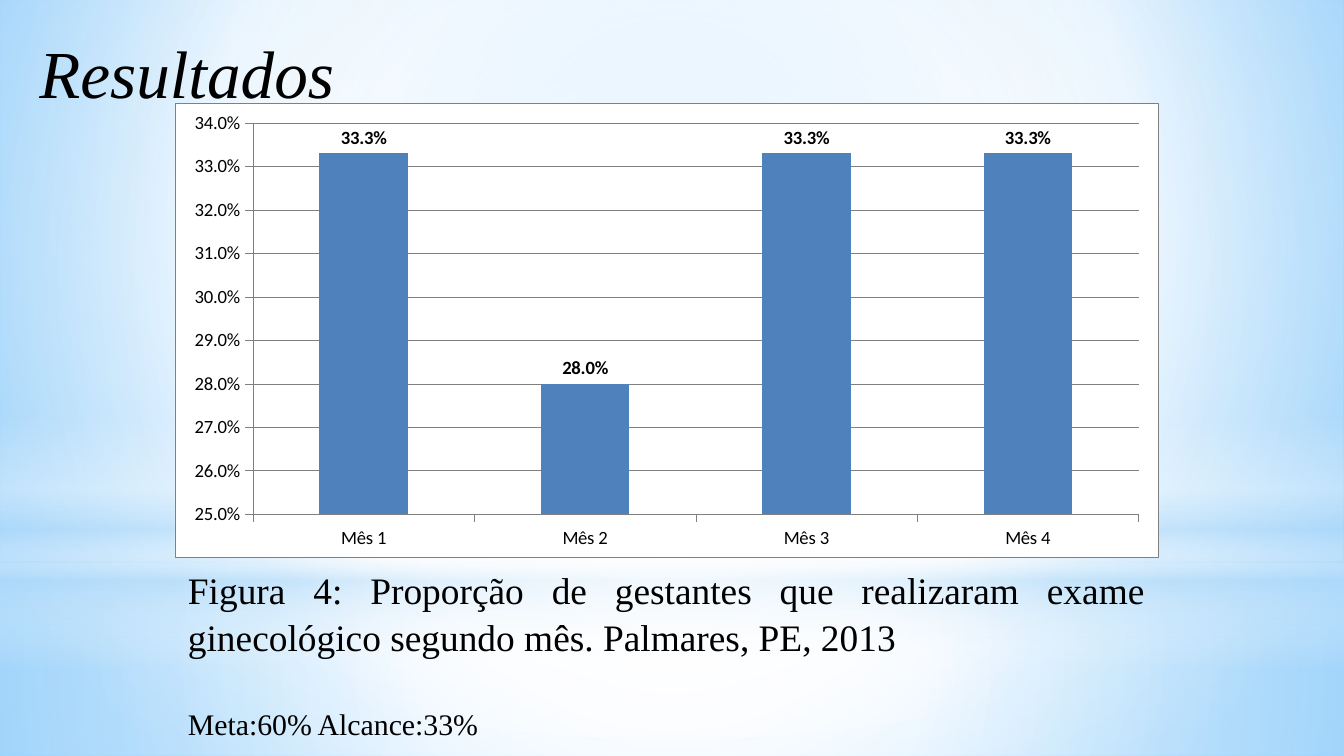
from dataclasses import dataclass

from pptx import Presentation
from pptx.chart.data import CategoryChartData
from pptx.dml.color import RGBColor
from pptx.enum.chart import XL_CHART_TYPE, XL_LABEL_POSITION, XL_TICK_MARK
from pptx.enum.shapes import MSO_SHAPE
from pptx.enum.text import PP_ALIGN
from pptx.oxml import parse_xml
from pptx.oxml.ns import nsdecls, qn
from pptx.util import Pt

RECT, OVAL = MSO_SHAPE.RECTANGLE, MSO_SHAPE.OVAL
LEFT, JUSTIFY = PP_ALIGN.LEFT, PP_ALIGN.JUSTIFY
COLUMNS = XL_CHART_TYPE.COLUMN_CLUSTERED
ABOVE = XL_LABEL_POSITION.OUTSIDE_END
OUTSIDE = XL_TICK_MARK.OUTSIDE

HEX = {
    "text": "000000", "white": "FFFFFF", "mist": "B4DCFA", "sky": "9ED5FF",
    "deep": "5BB9FF", "bar": "4F81BD", "rule": "808080",
}
SERIF, SANS = "Times New Roman", "Calibri"
WIDE, HIGH = 720, 405
PERCENT = "0.0%"
HAIR = 0.25
MONTHS = {"Mês 1": 0.333, "Mês 2": 0.28, "Mês 3": 0.333, "Mês 4": 0.333}

Box = tuple[float, float, float, float]


@dataclass
class Blend:
    """Gradient: stops are (place, colour, opacity) in percent."""
    stops: list[tuple[int, str, int]]
    focus: Box | None = None


@dataclass
class Panel:
    kind: MSO_SHAPE
    box: Box
    blend: Blend


@dataclass
class Line:
    text: str
    size: float
    italic: bool = False
    align: PP_ALIGN = LEFT
    before: float = 0
    pitch: float = 1.05


CENTER = (50, 50, 50, 50)
BACK = Blend([(0, "sky", 100), (60, "white", 100), (100, "deep", 100)],
             (20, 10, 20, 60))
PANELS = [
    Panel(RECT, (0, 301.5, WIDE, 103.5), Blend(
        [(0, "white", 91), (37, "white", 76), (100, "mist", 79)], CENTER)),
    Panel(RECT, (0, 0, WIDE, 301.5), Blend(
        [(0, "white", 89), (48, "white", 62), (100, "mist", 79)], CENTER)),
    Panel(RECT, (0, 222.5, WIDE, 135), Blend(
        [(0, "white", 0), (29, "white", 30), (45, "mist", 40),
         (55, "white", 26), (65, "mist", 60), (100, "white", 0)])),
    Panel(OVAL, (0, 94.5, WIDE, 301.5), Blend(
        [(0, "white", 100), (56, "white", 0)], CENTER)),
]
TITLE = [Line("Resultados", 36, italic=True, pitch=1.08)]
CAPTION = [
    Line("Figura 4: Proporção de gestantes que realizaram exame "
         "ginecológico segundo mês. Palmares, PE, 2013", 20, align=JUSTIFY),
    Line("Meta:60% Alcance:33%", 16, before=24),
]


def color(name: str) -> RGBColor:
    return RGBColor.from_string(HEX[name])


def spans(box: Box) -> list[Pt]:
    return [Pt(n) for n in box]


def fade(host, blend: Blend) -> None:
    """Swap the solid fill inside host for a gradient."""
    stops = "".join(
        f'<a:gs pos="{at * 1000}"><a:srgbClr val="{HEX[name]}">'
        f'<a:alpha val="{alpha * 1000}"/></a:srgbClr></a:gs>'
        for at, name, alpha in blend.stops)
    if blend.focus:
        sides = " ".join(f'{side}="{n * 1000}"'
                         for side, n in zip("ltrb", blend.focus))
        form = f'<a:path path="circle"><a:fillToRect {sides}/></a:path>'
    else:
        form = '<a:lin ang="5400000" scaled="0"/>'
    solid = host.find(qn("a:solidFill"))
    host.replace(solid, parse_xml(
        f'<a:gradFill {nsdecls("a")} rotWithShape="1">'
        f'<a:gsLst>{stops}</a:gsLst>{form}</a:gradFill>'))


def add_panel(slide, panel: Panel) -> None:
    shape = slide.shapes.add_shape(panel.kind, *spans(panel.box))
    shape.shadow.inherit = False
    shape.line.fill.background()
    shape.fill.solid()
    fade(shape.element.spPr, panel.blend)


def add_text(slide, box: Box, lines: list[Line]) -> None:
    frame = slide.shapes.add_textbox(*spans(box)).text_frame
    frame.word_wrap = True
    for i, line in enumerate(lines):
        para = frame.add_paragraph() if i else frame.paragraphs[0]
        para.alignment = line.align
        para.line_spacing = line.pitch
        if line.before:
            para.space_before = Pt(line.before)
        run = para.add_run()
        run.text = line.text
        font = run.font
        font.name, font.size, font.italic = SERIF, Pt(line.size), line.italic
        font.color.rgb = color("text")


def set_font(font, bold: bool = False) -> None:
    font.name, font.size, font.bold = SANS, Pt(10), bold
    font.color.rgb = color("text")


def set_rule(line) -> None:
    line.width = Pt(HAIR)
    line.color.rgb = color("rule")


def frame_xml(border: bool):
    """White chart area, with or without a thin border."""
    edge = (f'<a:ln w="{Pt(HAIR)}"><a:solidFill><a:srgbClr '
            f'val="{HEX["rule"]}"/></a:solidFill></a:ln>'
            if border else '<a:ln><a:noFill/></a:ln>')
    return parse_xml(
        f'<c:spPr {nsdecls("c", "a")}><a:solidFill><a:srgbClr '
        f'val="{HEX["white"]}"/></a:solidFill>{edge}</c:spPr>')


def add_bars(slide, box: Box) -> None:
    data = CategoryChartData(number_format=PERCENT)
    data.categories = list(MONTHS)
    data.add_series("Series 1", list(MONTHS.values()))
    chart = slide.shapes.add_chart(COLUMNS, *spans(box), data).chart
    chart.has_title = chart.has_legend = False
    set_font(chart.font)

    for axis in (chart.category_axis, chart.value_axis):
        axis.major_tick_mark = OUTSIDE
        set_font(axis.tick_labels.font)
        set_rule(axis.format.line)
    scale = chart.value_axis
    scale.minimum_scale, scale.maximum_scale = 0.25, 0.34
    scale.major_unit = 0.01
    scale.tick_labels.number_format = PERCENT
    scale.tick_labels.number_format_is_linked = False
    set_rule(scale.major_gridlines.format.line)

    plot = chart.plots[0]
    plot.gap_width = 150
    plot.vary_by_categories = False
    bars = plot.series[0]
    bars.format.fill.solid()
    bars.format.fill.fore_color.rgb = color("bar")
    tags = bars.data_labels
    tags.show_value = True
    tags.position = ABOVE
    tags.number_format = PERCENT
    tags.number_format_is_linked = False
    set_font(tags.font, bold=True)

    area = chart.element.find(qn("c:chart"))
    area.addnext(frame_xml(border=True))
    area.find(qn("c:plotArea")).append(frame_xml(border=False))


def main() -> None:
    deck = Presentation()
    deck.slide_width, deck.slide_height = Pt(WIDE), Pt(HIGH)
    slide = deck.slides.add_slide(deck.slide_layouts[6])
    slide.background.fill.solid()
    fade(slide.element.find(".//" + qn("p:bgPr")), BACK)
    for panel in PANELS:
        add_panel(slide, panel)
    add_bars(slide, (93.6, 55.4, 527, 243.4))
    add_text(slide, (14, 10, 204, 68), TITLE)
    add_text(slide, (93.6, 299, 527, 104), CAPTION)
    deck.save("out.pptx")


if __name__ == "__main__":
    main()
